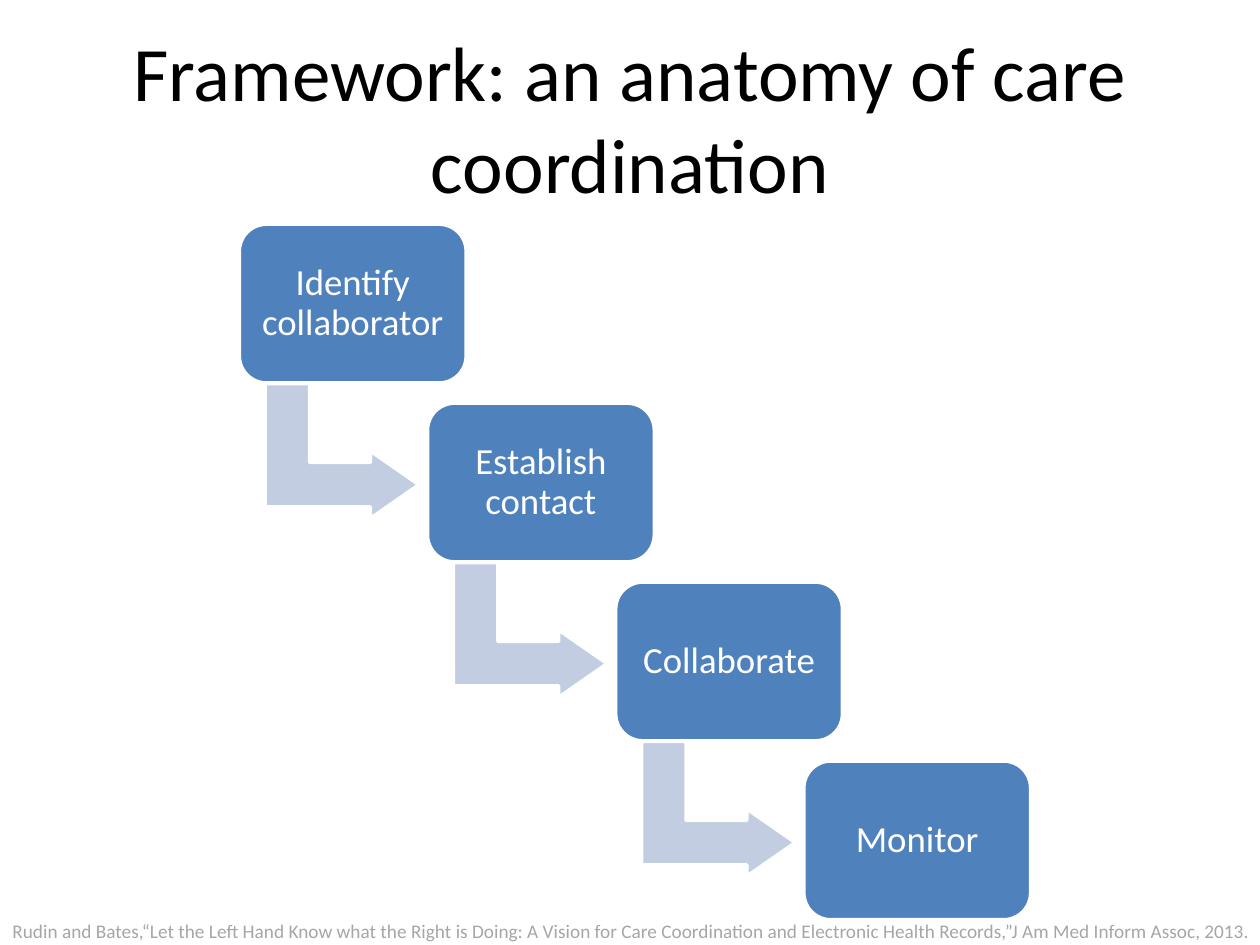
import pptx
import pptx.util
import pptx.dml.color
import pptx.enum.shapes
import pptx.enum.text
from pptx.util import Inches

SHAPE = pptx.enum.shapes.MSO_SHAPE
ALIGN = pptx.enum.text.PP_ALIGN
ANCHOR = pptx.enum.text.MSO_ANCHOR


def rgb(value):
    return pptx.dml.color.RGBColor.from_string(value)


class Deck:
    """Holds the style and the current slide."""
    font = "Calibri"
    black, white, grey = "000000", "FFFFFF", "A6A6A6"
    box_fill, arrow_fill = "4F81BD", "C2CDE1"

    def __init__(self, width, height):
        self.prs = pptx.Presentation()
        self.prs.slide_width = Inches(width)
        self.prs.slide_height = Inches(height)
        self.s = self.prs.slides.add_slide(self.prs.slide_layouts[6])

    def set_text(self, sp, text, size, color, align, anchor):
        tf = sp.text_frame
        tf.word_wrap = True
        tf.vertical_anchor = anchor
        p = tf.paragraphs[0]
        p.text = text
        p.alignment = align
        p.font.name = self.font
        p.font.size = pptx.util.Pt(size)
        p.font.color.rgb = rgb(color)
        return tf

    def text(self, box, text, size, color, align=ALIGN.LEFT, anchor=ANCHOR.TOP):
        sp = self.s.shapes.add_textbox(*map(Inches, box))
        self.set_text(sp, text, size, color, align, anchor)

    def shape(self, kind, box, fill, adjustments):
        sp = self.s.shapes.add_shape(kind, *map(Inches, box))
        sp.shadow.inherit = False
        sp.fill.solid()
        sp.fill.fore_color.rgb = rgb(fill)
        sp.line.color.rgb = rgb(self.white)
        sp.line.width = pptx.util.Pt(2)
        for i, value in enumerate(adjustments):
            sp.adjustments[i] = value
        return sp

    def step(self, left, top, label):
        sp = self.shape(SHAPE.ROUNDED_RECTANGLE, (left, top, 1.8, 1.26),
                        self.box_fill, [0.17])
        tf = self.set_text(sp, label, 21, self.white, ALIGN.CENTER, ANCHOR.MIDDLE)
        tf.margin_left = tf.margin_right = Inches(0.09)
        tf.margin_top = tf.margin_bottom = Inches(0.09)
        tf.paragraphs[0].line_spacing = 0.9

    def arrow(self, left, top):
        sp = self.shape(SHAPE.BENT_UP_ARROW, (left, top, 1.07, 1.22),
                        self.arrow_fill, [0.33, 0.25, 0.36])
        sp.rotation = 90


def main():
    deck = Deck(10, 7.5)
    deck.text((0.5, 0.3, 9, 1.25), "Framework: an anatomy of care coordination",
              44, deck.black, ALIGN.CENTER, ANCHOR.MIDDLE)

    steps = ["Identify collaborator", "Establish contact", "Collaborate", "Monitor"]
    for i, label in enumerate(steps):
        left, top = 1.9 + 4.48 * i / 3, 1.78 + 1.42 * i
        if i < len(steps) - 1:
            deck.arrow(left + 0.28, top + 1.19)
        deck.step(left, top, label)

    deck.text((0, 7.25, 10.08, 0.29),
              "Rudin and Bates,“Let the Left Hand Know what the Right is Doing: "
              "A Vision for Care Coordination and Electronic Health Records,”"
              "J Am Med Inform Assoc, 2013.", 11, deck.grey)
    deck.prs.save("out.pptx")


if __name__ == "__main__":
    main()
